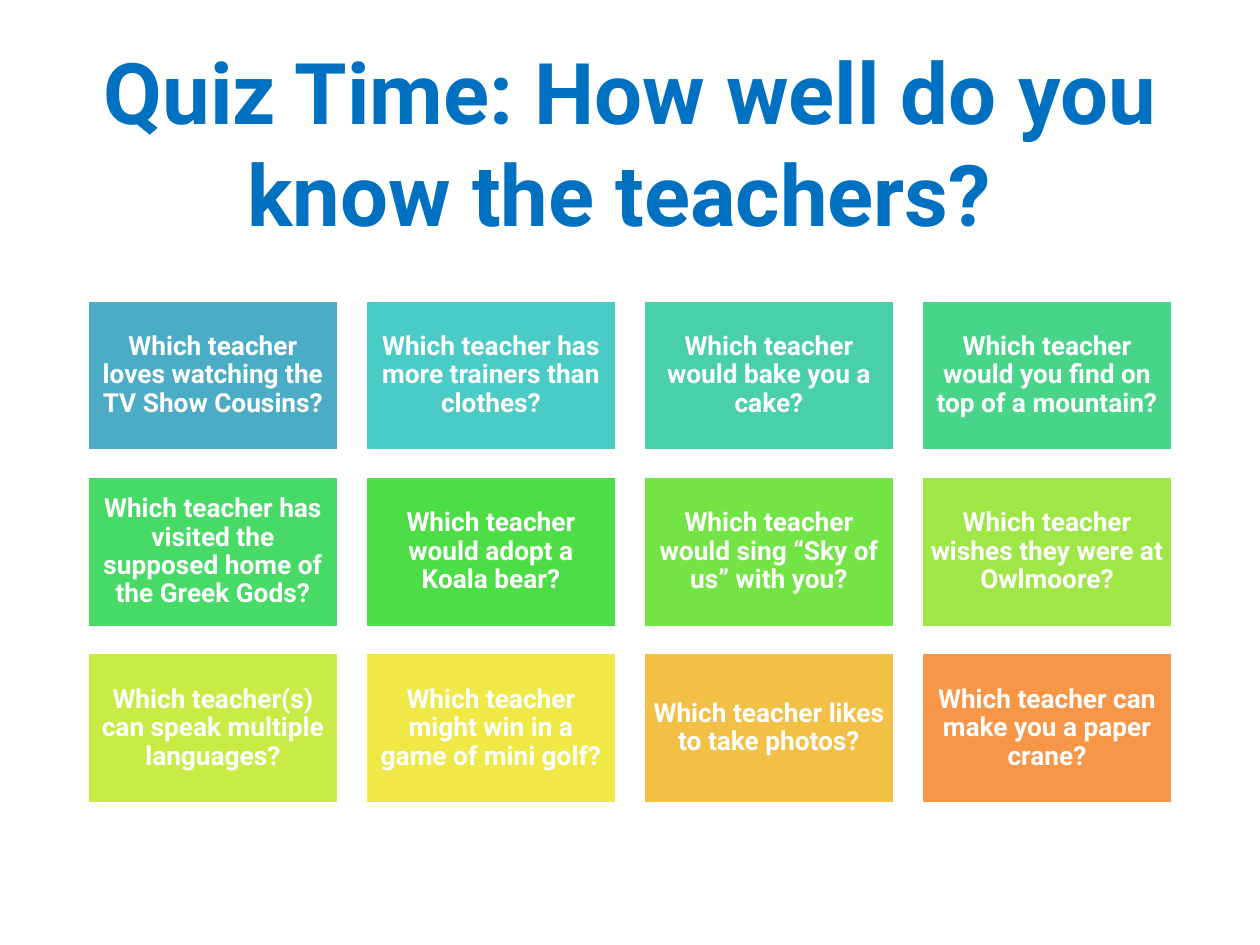
from pptx import Presentation
from pptx.dml.color import RGBColor
from pptx.enum.shapes import MSO_SHAPE
from pptx.enum.text import MSO_ANCHOR, PP_ALIGN
from pptx.util import Inches, Pt

TITLE = "Quiz Time: How well do you know the teachers? "
QUESTIONS = [
    ("Which teacher loves watching the TV Show Cousins?", "4BACC6"),
    ("Which teacher has more trainers than clothes?", "4ACBC6"),
    ("Which teacher would bake you a cake?", "49D0A9"),
    ("Which teacher would you find on top of a mountain?", "48D589"),
    ("Which teacher has visited the supposed home of the Greek Gods?", "47DA66"),
    ("Which teacher would adopt a Koala bear?", "4DDE47"),
    ("Which teacher would sing “Sky of us” with you?", "74E346"),
    ("Which teacher wishes they were at Owlmoore?", "9EE746"),
    ("Which teacher(s) can speak multiple languages?", "C9EB46"),
    ("Which teacher might win in a game of mini golf?", "EFE846"),
    ("Which teacher likes to take photos?", "F3C046"),
    ("Which teacher can make you a paper crane?", "F79646"),
]
COLUMNS = 4
LEFT, TOP = 0.69, 2.38
CONTENT_WIDTH = 8.62
CARD_WIDTH, CARD_HEIGHT = 2, 1.2
COLUMN_STEP = (CONTENT_WIDTH - CARD_WIDTH) / (COLUMNS - 1)
ROW_STEP = 1.4
CARD_INSET = Inches(0.06)
TITLE_FRAME = {"word_wrap": True, "vertical_anchor": MSO_ANCHOR.MIDDLE}
CARD_FRAME = {
    **TITLE_FRAME,
    "margin_left": CARD_INSET,
    "margin_top": CARD_INSET,
    "margin_right": CARD_INSET,
    "margin_bottom": CARD_INSET,
}


def color(hex_value):
    return RGBColor.from_string(hex_value)


def apply_format(target, values):
    for name, value in values.items():
        setattr(target, name, value)


def write_text(frame, text, size, hex_value, frame_format, line_spacing):
    apply_format(frame, frame_format)
    paragraph = frame.paragraphs[0]
    apply_format(paragraph, {"alignment": PP_ALIGN.CENTER, "line_spacing": line_spacing})
    words = paragraph.add_run()
    words.text = text
    apply_format(words.font, {"name": "Roboto", "size": Pt(size), "bold": True})
    words.font.color.rgb = color(hex_value)


def place_title(slide):
    heading = slide.shapes.title
    apply_format(heading, {
        "left": Inches(LEFT),
        "top": Inches(0.4),
        "width": Inches(CONTENT_WIDTH),
        "height": Inches(1.45),
    })
    write_text(heading.text_frame, TITLE, 48.6, "0070C0", TITLE_FRAME, 1.0)


def add_question_card(slide, index, question, fill):
    row, column = divmod(index, COLUMNS)
    card = slide.shapes.add_shape(
        MSO_SHAPE.RECTANGLE,
        Inches(LEFT + column * COLUMN_STEP),
        Inches(TOP + row * ROW_STEP),
        Inches(CARD_WIDTH),
        Inches(CARD_HEIGHT),
    )
    card.shadow.inherit = False
    card.fill.solid()
    card.fill.fore_color.rgb = color(fill)
    card.line.color.rgb = color("FFFFFF")
    card.line.width = Pt(2)
    write_text(card.text_frame, question, 15, "FFFFFF", CARD_FRAME, 0.9)


def main():
    presentation = Presentation()
    presentation.slide_width = Inches(10)
    presentation.slide_height = Inches(7.5)
    slide = presentation.slides.add_slide(presentation.slide_layouts[5])
    place_title(slide)
    for index, (question, fill) in enumerate(QUESTIONS):
        add_question_card(slide, index, question, fill)
    presentation.save("out.pptx")


if __name__ == "__main__":
    main()
